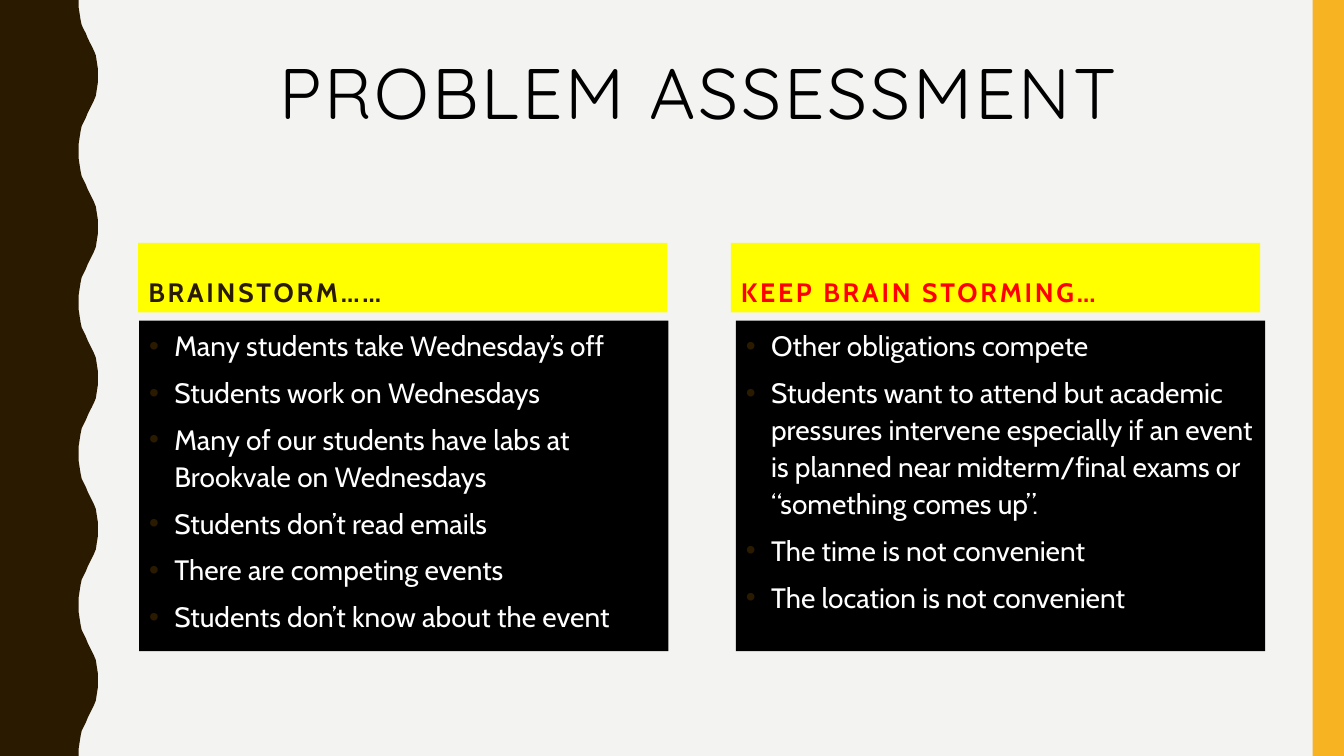
from lxml import etree
from pptx import Presentation
from pptx.dml.color import RGBColor
from pptx.enum.shapes import MSO_SHAPE
from pptx.enum.text import MSO_ANCHOR, MSO_AUTO_SIZE, PP_ALIGN
from pptx.oxml.ns import qn
from pptx.util import Inches, Pt

RECT = MSO_SHAPE.RECTANGLE
TOP, BOTTOM = MSO_ANCHOR.TOP, MSO_ANCHOR.BOTTOM
LEFT, CENTER = PP_ALIGN.LEFT, PP_ALIGN.CENTER
NO_FIT = MSO_AUTO_SIZE.NONE

PAPER, BROWN, GOLD = "F3F3F2", "2A1A00", "F8B323"
BLACK, WHITE, YELLOW, RED = "000000", "FFFFFF", "FFFF00", "FF0000"

WAVES, PITCH = 5, 20
CURVE = [(5.85, 0), (5.85, 0.93), (5.93, 1.87), (6, 2.67), (6.08, 3.33),
         (6.23, 3.87), (6.38, 4.4), (6.53, 5.07), (6.68, 5.6), (6.83, 6.13),
         (6.98, 6.67), (7.13, 7.33), (7.2, 8.13), (7.28, 9.07), (7.28, 10)]

COLUMNS = [
    (10.28, 10.35, "BRAINSTORM……", BROWN, [
        "Many students take Wednesday’s off",
        "Students work on Wednesdays",
        "Many of our students have labs at Brookvale on Wednesdays",
        "Students don’t read emails",
        "There are competing events",
        "Students don’t know about the event"]),
    (54.38, 54.75, "KEEP BRAIN STORMING…", RED, [
        "Other obligations compete",
        "Students want to attend but academic pressures intervene especially "
        "if an event is planned near midterm/final exams or “something comes up”.",
        "The time is not convenient",
        "The location is not convenient"]),
]


def paint(fill, color):
    fill.solid()
    fill.fore_color.rgb = RGBColor.from_string(color)


def write(para, text, size, color, font="Cabin", bold=False, track=0,
          align=LEFT, line=1, before=0, bullet=None):
    para.alignment, para.line_spacing = align, line
    para.space_before, para.space_after = Pt(before), Pt(0)
    run = para.add_run()
    run.text = text
    run.font.name, run.font.size, run.font.bold = font, Pt(size), bold
    paint(run.font.fill, color)
    run._r.get_or_add_rPr().set("spc", str(track * 100))
    if bullet:
        props = para._p.get_or_add_pPr()
        props.set("marL", str(Inches(0.25)))
        props.set("indent", str(Inches(-0.25)))
        tint = etree.SubElement(props, qn("a:buClr"))
        etree.SubElement(tint, qn("a:srgbClr")).set("val", bullet)
        etree.SubElement(props, qn("a:buChar")).set("char", "•")


class Board:
    """Holds the current slide and its style, with lengths in percent of the slide."""

    def __init__(self, deck):
        self.wide, self.high = deck.slide_width, deck.slide_height
        self.slide = deck.slides.add_slide(deck.slide_layouts[4])
        paint(self.slide.background.fill, PAPER)

    def spot(self, x, y):
        return round(self.wide * x / 100), round(self.high * y / 100)

    def finish(self, shape, color):
        paint(shape.fill, color)
        shape.line.fill.background()
        shape.shadow.inherit = False

    def bar(self, x, y, w, h, color):
        shape = self.slide.shapes.add_shape(RECT, *self.spot(x, y), *self.spot(w, h))
        self.finish(shape, color)

    def wave(self, color):
        cycle = CURVE + [(x, PITCH - y) for x, y in CURVE[-2::-1]]
        edge = [self.spot(x, y + n * PITCH) for n in range(WAVES) for x, y in cycle]
        pen = self.slide.shapes.build_freeform(0, 0)
        pen.add_line_segments(edge + [self.spot(0, 100)], close=True)
        self.finish(pen.convert_to_shape(), color)

    def holder(self, index, x, y, w, h, lines, anchor=TOP, fill=None, **style):
        shape = self.slide.placeholders[index]
        shape.left, shape.top = self.spot(x, y)
        shape.width, shape.height = self.spot(w, h)
        if fill:
            paint(shape.fill, fill)
        frame = shape.text_frame
        frame.word_wrap, frame.auto_size = True, NO_FIT
        frame.vertical_anchor = anchor
        for n, text in enumerate(lines):
            para = frame.add_paragraph() if n else frame.paragraphs[0]
            write(para, text, **style)


def main():
    deck = Presentation()
    deck.slide_width, deck.slide_height = Inches(13.33), Inches(7.5)
    board = Board(deck)
    board.wave(BROWN)
    board.bar(97.67, 0, 2.33, 100, GOLD)
    board.holder(0, 10.28, 6.93, 83.4, 21.73, ["PROBLEM ASSESSMENT"], size=51,
                 color=BLACK, font="Quicksand", track=2, align=CENTER, line=0.9)
    for n, (head_x, list_x, head, color, items) in enumerate(COLUMNS):
        board.holder(2 * n + 1, head_x, 32.13, 39.38, 9.2, [head], anchor=BOTTOM,
                     fill=YELLOW, size=19, color=color, bold=True, track=2, before=7)
        board.holder(2 * n + 2, list_x, 42.4, 39.38, 43.73, items, fill=BLACK,
                     size=20, color=WHITE, line=1.1, before=7, bullet=BROWN)
    deck.save("out.pptx")


if __name__ == "__main__":
    main()
